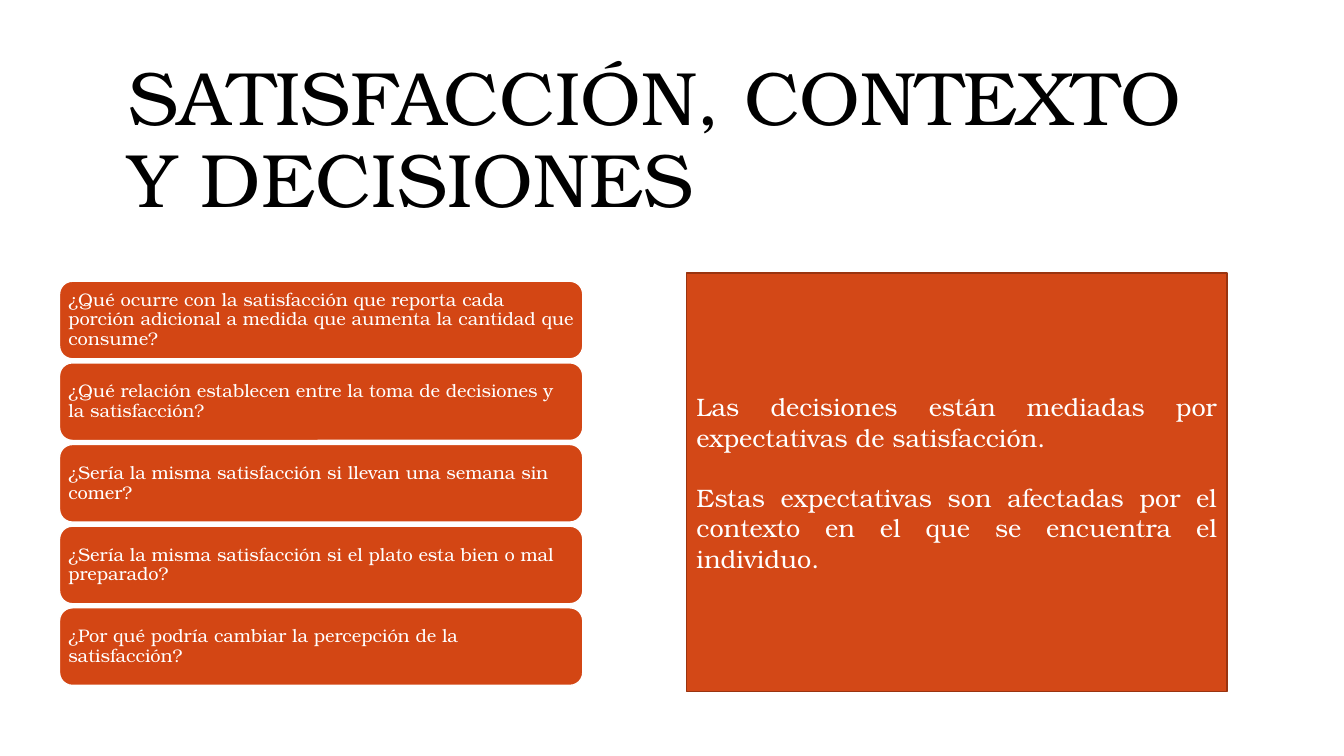
from dataclasses import dataclass

from pptx import Presentation
from pptx.dml.color import RGBColor
from pptx.enum.shapes import MSO_SHAPE
from pptx.enum.text import MSO_ANCHOR, MSO_AUTO_SIZE, PP_ALIGN
from pptx.util import Emu, Pt


@dataclass(frozen=True)
class Theme:
    font: str = "TeX Gyre Bonum"
    black: str = "000000"
    white: str = "FFFFFF"
    question_fill: str = "D34614"
    conclusion_fill: str = "D34817"
    conclusion_line: str = "993410"
    title_size: int = 54
    question_size: int = 13
    conclusion_size: int = 18


THEME = Theme()
TITLE_ONLY_LAYOUT = 5
QUESTIONS = [
    "¿Qué ocurre con la satisfacción que reporta cada porción adicional a medida que aumenta la cantidad que consume?",
    "¿Qué relación establecen entre la toma de decisiones y la satisfacción?",
    "¿Sería la misma satisfacción si llevan una semana sin comer?",
    "¿Sería la misma satisfacción si el plato esta bien o mal preparado?",
    "¿Por qué podría cambiar la percepción de la satisfacción?",
]
CONCLUSIONS = [
    "Las decisiones están mediadas por expectativas de satisfacción.",
    "Estas expectativas son afectadas por el contexto en el que se encuentra el individuo.",
]


def px(length):
    return Emu(length * 9144)


def write_text(shape, paragraphs, *, size, color, align=PP_ALIGN.LEFT,
               line_spacing=1.0, gap=0, inset=10):
    frame = shape.text_frame
    frame.word_wrap = True
    frame.auto_size = MSO_AUTO_SIZE.NONE
    frame.vertical_anchor = MSO_ANCHOR.MIDDLE
    frame.margin_left = frame.margin_right = px(inset)
    frame.margin_top = frame.margin_bottom = px(5)
    for index, text in enumerate(paragraphs):
        paragraph = frame.add_paragraph() if index else frame.paragraphs[0]
        paragraph.text = text
        paragraph.alignment = align
        paragraph.line_spacing = line_spacing
        paragraph.space_before = Pt(gap if index else 0)
        paragraph.font.name = THEME.font
        paragraph.font.size = Pt(size)
        paragraph.font.color.rgb = RGBColor.from_string(color)


class SlideBuilder:
    def __init__(self, presentation, theme):
        self.theme = theme
        self.slide = presentation.slides.add_slide(
            presentation.slide_layouts[TITLE_ONLY_LAYOUT])

    def title(self, text, left, top, width, height):
        shape = self.slide.shapes.title
        shape.left, shape.top = px(left), px(top)
        shape.width, shape.height = px(width), px(height)
        write_text(shape, [text], size=self.theme.title_size,
                   color=self.theme.black, line_spacing=0.9)

    def panel(self, kind, left, top, width, height, *, fill, line):
        shape = self.slide.shapes.add_shape(
            kind, px(left), px(top), px(width), px(height))
        shape.shadow.inherit = False
        shape.fill.solid()
        shape.fill.fore_color.rgb = RGBColor.from_string(fill)
        shape.line.color.rgb = RGBColor.from_string(line)
        shape.line.width = Pt(1)
        return shape

    def question_list(self, questions, left, top, width, height, gap):
        for index, question in enumerate(questions):
            shape = self.panel(
                MSO_SHAPE.ROUNDED_RECTANGLE, left, top + index * (height + gap),
                width, height, fill=self.theme.question_fill,
                line=self.theme.white)
            write_text(shape, [question], size=self.theme.question_size,
                       color=self.theme.white, line_spacing=0.9, inset=5)

    def conclusion(self, paragraphs, left, top, width, height):
        shape = self.panel(
            MSO_SHAPE.RECTANGLE, left, top, width, height,
            fill=self.theme.conclusion_fill, line=self.theme.conclusion_line)
        write_text(shape, paragraphs, size=self.theme.conclusion_size,
                   color=self.theme.white, align=PP_ALIGN.JUSTIFY, gap=21.6)


def main():
    presentation = Presentation()
    presentation.slide_width = px(1333)
    presentation.slide_height = px(750)
    builder = SlideBuilder(presentation, THEME)
    builder.question_list(QUESTIONS, 59, 279, 519, 77, 4)
    builder.title("SATISFACCIÓN, CONTEXTO Y DECISIONES", 117, 53, 1100, 176)
    builder.conclusion(CONCLUSIONS, 681, 271, 536, 415)
    presentation.save("out.pptx")


if __name__ == "__main__":
    main()
